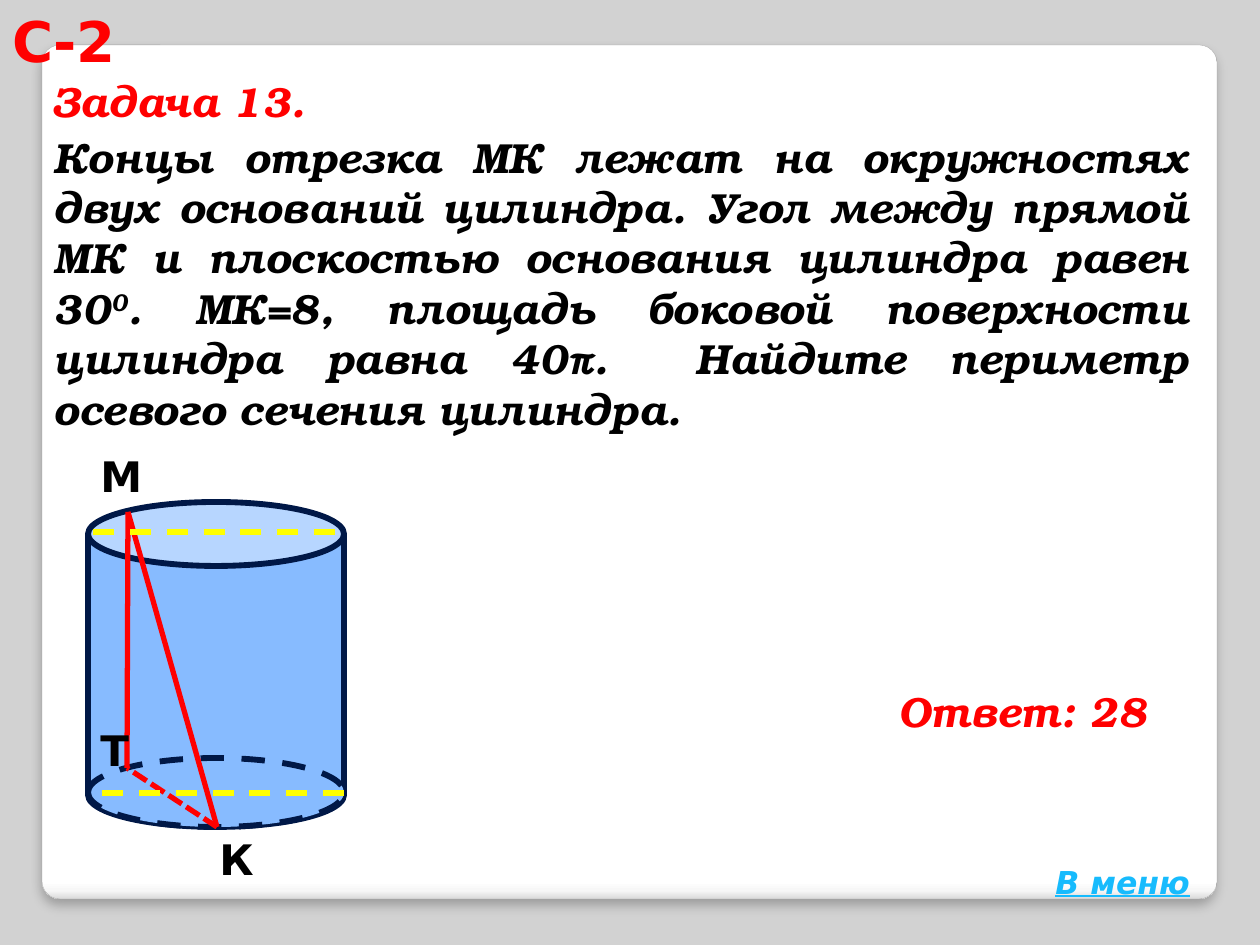
from lxml import etree
from pptx import Presentation
from pptx.dml.color import RGBColor
from pptx.enum.dml import MSO_LINE
from pptx.enum.shapes import MSO_CONNECTOR, MSO_SHAPE
from pptx.enum.text import PP_ALIGN
from pptx.oxml import parse_xml
from pptx.oxml.ns import nsdecls, qn
from pptx.util import Emu, Pt

PX = 914400 / 126
DASH, SHORT_DASH = MSO_LINE.DASH, MSO_LINE.SQUARE_DOT
STRAIGHT = MSO_CONNECTOR.STRAIGHT
ROUNDED, CAN, OVAL = MSO_SHAPE.ROUNDED_RECTANGLE, MSO_SHAPE.CAN, MSO_SHAPE.OVAL
JUSTIFY = PP_ALIGN.JUSTIFY

SERIF, SANS = "TeX Gyre Bonum", "DejaVu Sans"
BACKGROUND = RGBColor(0xD2, 0xD2, 0xD2)
WHITE = RGBColor(0xFF, 0xFF, 0xFF)
PANEL_EDGE = RGBColor(0xA4, 0xA4, 0xA4)
BLACK = RGBColor(0, 0, 0)
RED = RGBColor(0xFF, 0, 0)
YELLOW = RGBColor(0xFF, 0xFF, 0)
NAVY = RGBColor(0, 0x18, 0x47)
BLUE = RGBColor(0x87, 0xBB, 0xFF)
LINK_BLUE = RGBColor(0x17, 0xBB, 0xFD)
PANEL_STOPS = [(0, WHITE), (98, WHITE), (99, RGBColor(0xF7, 0xF7, 0xF7)),
               (100, RGBColor(0xDA, 0xDA, 0xDA))]


def px(length):
    return Emu(round(length * PX))


class Board:
    """Draws styled elements, measured in px, on one slide."""

    def __init__(self, slide):
        self.slide = slide
        self.shapes = slide.shapes
        fill = slide.background.fill
        fill.solid()
        fill.fore_color.rgb = BACKGROUND

    def shape(self, kind, left, top, width, height, fill, edge, weight, dash=None):
        shape = self.shapes.add_shape(kind, px(left), px(top), px(width), px(height))
        shape.shadow.inherit = False
        shape.fill.solid()
        shape.fill.fore_color.rgb = fill
        shape.line.color.rgb = edge
        shape.line.width = Pt(weight)
        shape.line.dash_style = dash
        return shape

    def panel(self, left, top, width, height):
        """Rounded sheet with a shaded lower edge and a soft shadow."""
        panel = self.shape(ROUNDED, left, top, width, height, WHITE, PANEL_EDGE, 0.16)
        panel.adjustments[0] = 0.021
        properties = panel.element.spPr
        stops = "".join(f'<a:gs pos="{pos * 1000}"><a:srgbClr val="{color}"/></a:gs>'
                        for pos, color in PANEL_STOPS)
        gradient = parse_xml(f'<a:gradFill {nsdecls("a")}><a:gsLst>{stops}</a:gsLst>'
                             '<a:lin ang="5400000" scaled="0"/></a:gradFill>')
        properties.replace(properties.find(qn("a:solidFill")), gradient)
        shadow = parse_xml(f'<a:outerShdw {nsdecls("a")} blurRad="{Pt(6)}" dist="{Pt(4)}" '
                           'dir="5400000" rotWithShape="0"><a:srgbClr val="000000">'
                           '<a:alpha val="25000"/></a:srgbClr></a:outerShdw>')
        properties.find(qn("a:effectLst")).append(shadow)

    def line(self, start, end, color, dash=None):
        line = self.shapes.add_connector(STRAIGHT, *map(px, start + end))
        line.line.color.rgb = color
        line.line.width = Pt(3)
        line.line.dash_style = dash
        etree.SubElement(line.element.spPr, qn("a:effectLst"))

    def text(self, left, top, width, height, parts, color, font=SANS, size=24,
             italic=False, underline=None, wrap=False):
        """Each odd entry of parts is set as superscript."""
        box = self.shapes.add_textbox(px(left), px(top), px(width), px(height))
        frame = box.text_frame
        frame.word_wrap = wrap
        para = frame.paragraphs[0]
        for index, part in enumerate(parts):
            span = para.add_run()
            span.text = part
            span.font.name = font
            span.font.size = Pt(size)
            span.font.bold = True
            span.font.italic = italic
            span.font.underline = underline
            span.font.color.rgb = color
            if index % 2:
                span.font._element.set("baseline", "30000")
        return box

    def problem(self, left, top, width, height, parts):
        frame = self.text(left, top, width, height, parts, BLACK, SERIF,
                          italic=True, wrap=True).text_frame
        frame.margin_left, frame.margin_top = px(25), px(13)
        frame.paragraphs[0].alignment = JUSTIFY
        frame.paragraphs[0].space_before = Pt(2.5)


def main():
    deck = Presentation()
    deck.slide_width, deck.slide_height = px(1260), px(945)
    board = Board(deck.slides.add_slide(deck.slide_layouts[6]))

    board.panel(42, 45, 1175, 854)
    board.problem(29, 118, 1172, 374, [
        "Концы отрезка МК лежат на окружностях двух оснований цилиндра. "
        "Угол между прямой МК и плоскостью основания цилиндра равен 30", "0",
        ". МК=8, площадь боковой поверхности цилиндра равна 40π.  "
        "Найдите периметр осевого сечения цилиндра."])
    board.text(886, 679, 275, 63, ["Ответ: 28"], RED, SERIF, italic=True)
    board.text(88, 444, 53, 63, ["М"], BLACK, wrap=True)
    board.text(207, 827, 49, 63, ["К"], BLACK)

    board.shape(CAN, 88, 502, 256, 325, BLUE, NAVY, 3.35)
    board.shape(OVAL, 88, 758, 256, 69, BLUE, NAVY, 3.35, DASH)
    point_m, point_k, point_t = (128, 512), (217, 827), (127, 768)
    board.line(point_k, point_t, RED, SHORT_DASH)
    board.line(point_m, point_k, RED)
    board.line((344, 793), (88, 793), YELLOW, DASH)
    board.line(point_m, point_t, RED)
    board.line((335, 532), (79, 532), YELLOW, DASH)
    board.text(88, 718, 47, 63, ["Т"], BLACK)

    board.text(1043, 857, 163, 50, ["В меню"], LINK_BLUE, size=18,
               italic=True, underline=True)
    board.text(0, 0, 147, 81, ["С-2"], RED, size=32, wrap=True)
    board.text(39, 69, 282, 63, ["Задача 13."], RED, SERIF, italic=True)
    deck.save("out.pptx")


if __name__ == "__main__":
    main()
